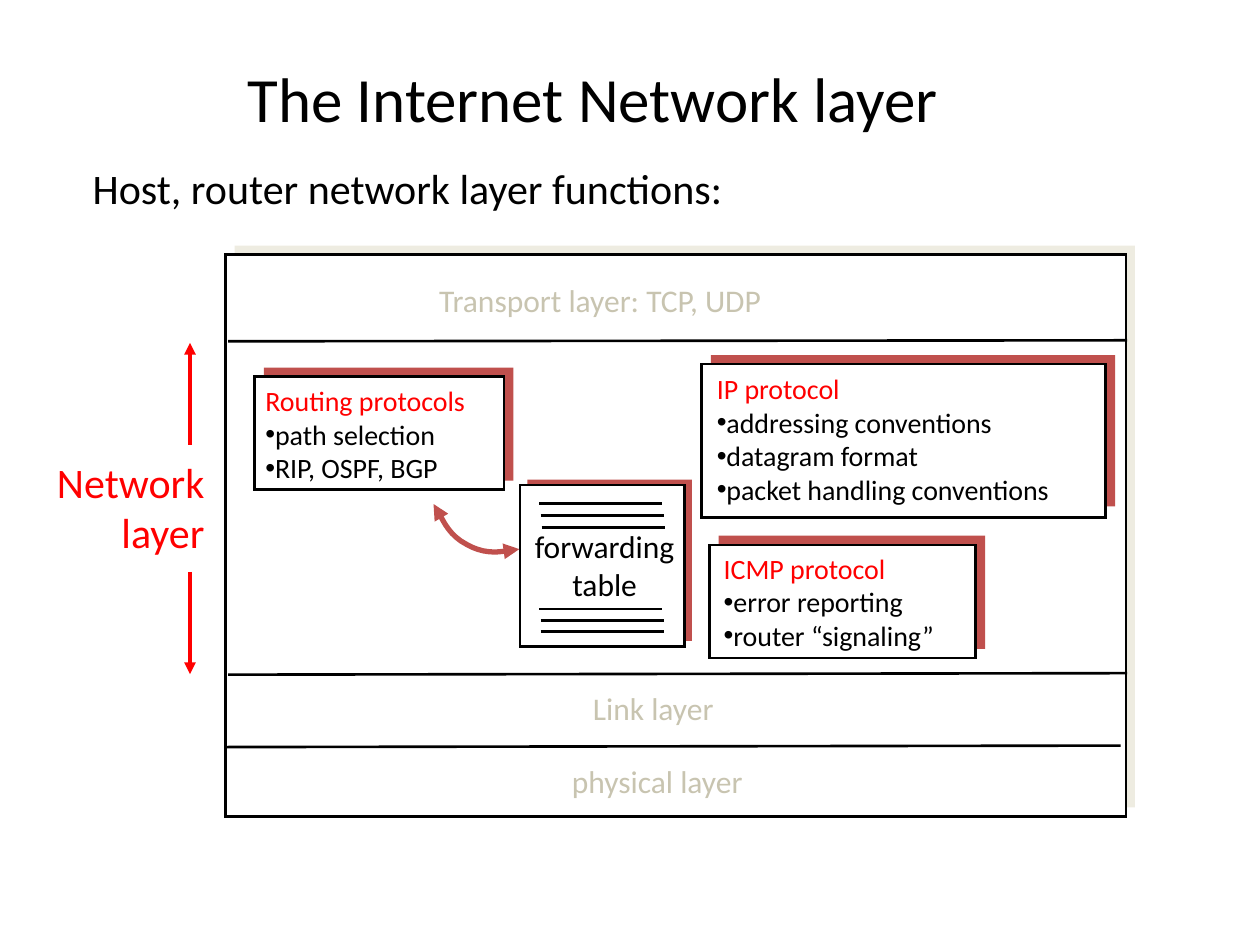
from lxml.etree import SubElement
from pptx import Presentation
from pptx.dml.color import RGBColor
from pptx.enum.shapes import MSO_CONNECTOR, MSO_SHAPE
from pptx.enum.text import MSO_ANCHOR, PP_ALIGN
from pptx.oxml.ns import qn
from pptx.util import Cm, Pt

BLACK, WHITE, RED, BRICK, CREAM = "000000", "FFFFFF", "FF0000", "C0504D", "EEECE1"
FAINT = "C8C4B0"
LEFT, CENTER, RIGHT = PP_ALIGN.LEFT, PP_ALIGN.CENTER, PP_ALIGN.RIGHT

TITLE = ("The Internet Network layer", (1.16, 0.38, 21.59, 3.18))
SUBTITLE = ("Host, router network layer functions:", (1.62, 3.15, 20.93, 1.22))
STACK = ((4.55, 5.13, 18.15, 11.33), (4.73, 4.95, 18.15, 11.33))
LAYERS = [
    ("Transport layer: TCP, UDP", 12.1, 6.04),
    ("Link layer", 13.17, 14.28),
    ("physical layer", 13.25, 15.75),
]
DIVIDERS = [
    (4.6, 6.88, 22.72, 6.86),
    (4.6, 13.6, 22.72, 13.57),
    (4.52, 15.06, 22.59, 15.03),
]
PROTOCOLS = [
    {
        "heading": "Routing protocols",
        "items": ["path selection", "RIP, OSPF, BGP"],
        "front": (5.13, 7.59, 5.03, 2.28),
        "back": (5.32, 7.41, 5.03, 2.28),
        "text": (5.1, 7.61, 5.08, 2.29),
    },
    {
        "heading": "IP protocol",
        "items": ["addressing conventions", "datagram format", "packet handling conventions"],
        "front": (14.14, 7.34, 8.15, 3.1),
        "back": (14.33, 7.16, 8.15, 3.05),
        "text": (14.2, 7.37, 8.03, 2.97),
    },
    {
        "heading": "ICMP protocol",
        "items": ["error reporting", "router “signaling”"],
        "front": (14.3, 10.99, 5.37, 2.28),
        "back": (14.49, 10.8, 5.37, 2.28),
        "text": (14.34, 10.99, 5.28, 2.29),
    },
]
TABLE = ((10.48, 9.78, 3.32, 3.25), (10.63, 9.67, 3.32, 3.25))
TABLE_LABEL = (["forwarding", "table"], (10.31, 10.5, 3.76, 1.78))
TABLE_ROWS = [
    (10.87, 10.15), (10.9, 10.39), (10.92, 10.63),
    (10.87, 12.28), (10.9, 12.51), (10.9, 12.73),
]
ROW_LENGTH = 2.48
SIDE_LABEL = (["Network", "layer"], (0.43, 9.07, 3.94, 2.29))
SIDE_ARROWS = [(3.83, 8.97, 3.83, 6.91), (3.83, 11.53, 3.83, 13.59)]
CURVE = [
    ((8.74, 10.16), (8.86, 10.24), (8.92, 10.72), (9.4, 10.97)),
    ((9.4, 10.97), (9.88, 11.25), (10.26, 11.07), (10.47, 11.07)),
]
CURVE_STEPS = 12

presentation = Presentation()
presentation.slide_width, presentation.slide_height = Cm(25.4), Cm(19.05)
slide = presentation.slides.add_slide(presentation.slide_layouts[6])
shapes = slide.shapes


def color(value):
    return RGBColor.from_string(value)


def lengths(values):
    return [Cm(value) for value in values]


def add_rectangle(box, fill, outlined=False):
    shape = shapes.add_shape(MSO_SHAPE.RECTANGLE, *lengths(box))
    shape.shadow.inherit = False
    shape.fill.solid()
    shape.fill.fore_color.rgb = color(fill)
    if outlined:
        style_line(shape, BLACK, 1.5)
        SubElement(shape.line._get_or_add_ln(), qn("a:miter"), lim="800000")
    else:
        shape.line.fill.background()


def add_card(front, back, back_color):
    add_rectangle(back, back_color)
    add_rectangle(front, WHITE, outlined=True)


def add_text(lines, box, size, ink=BLACK, alignment=LEFT, anchor=MSO_ANCHOR.TOP, bulleted=()):
    frame = shapes.add_textbox(*lengths(box)).text_frame
    for name, value in {"word_wrap": True, "vertical_anchor": anchor}.items():
        setattr(frame, name, value)
    entries = [(line, ink, False) for line in lines] + [(line, BLACK, True) for line in bulleted]
    for index, (line, line_ink, has_bullet) in enumerate(entries):
        paragraph = frame.add_paragraph() if index else frame.paragraphs[0]
        paragraph.text = line
        paragraph.alignment = alignment
        if has_bullet:
            properties = paragraph._p.get_or_add_pPr()
            SubElement(properties, qn("a:buFont"), typeface="Arial")
            SubElement(properties, qn("a:buChar"), char="•")
        font = paragraph.runs[0].font
        for name, value in {"name": "Calibri", "size": Pt(size)}.items():
            setattr(font, name, value)
        font.color.rgb = color(line_ink)


def style_line(shape, ink, width, arrowheads=()):
    shape.line.color.rgb = color(ink)
    shape.line.width = Pt(width)
    for end in arrowheads:
        SubElement(shape.line._get_or_add_ln(), qn(f"a:{end}"), type="triangle")


def add_line(ends, ink=BLACK, width=1.5, arrowheads=()):
    connector = shapes.add_connector(MSO_CONNECTOR.STRAIGHT, *lengths(ends))
    style_line(connector, ink, width, arrowheads)
    SubElement(connector._element.spPr, qn("a:effectLst"))


def curve_point(controls, t):
    weights = ((1 - t) ** 3, 3 * t * (1 - t) ** 2, 3 * t * t * (1 - t), t ** 3)
    return [Cm(sum(w * point[axis] for w, point in zip(weights, controls))) for axis in (0, 1)]


def add_curve():
    points = [curve_point(controls, step / CURVE_STEPS)
              for controls in CURVE for step in range(1, CURVE_STEPS + 1)]
    builder = shapes.build_freeform(*lengths(CURVE[0][0]))
    builder.add_line_segments(points, close=False)
    shape = builder.convert_to_shape()
    shape.shadow.inherit = False
    shape.fill.background()
    style_line(shape, BRICK, 3, ("headEnd", "tailEnd"))


add_card(*STACK, CREAM)
add_text([TITLE[0]], TITLE[1], 36, alignment=CENTER, anchor=MSO_ANCHOR.MIDDLE)
add_text([SUBTITLE[0]], SUBTITLE[1], 24)
for label, center_x, center_y in LAYERS:
    add_text([label], (center_x - 4, center_y - 0.5, 8, 1), 18, FAINT, CENTER, MSO_ANCHOR.MIDDLE)
for divider in DIVIDERS:
    add_line(divider)

add_card(*TABLE, BRICK)
add_text(*TABLE_LABEL, 18, alignment=CENTER)
for x, y in TABLE_ROWS:
    add_line((x, y, x + ROW_LENGTH, y))

for protocol in PROTOCOLS:
    add_card(protocol["front"], protocol["back"], BRICK)
    add_text([protocol["heading"]], protocol["text"], 16, RED, bulleted=protocol["items"])
add_curve()

add_text(*SIDE_LABEL, 24, RED, RIGHT)
for arrow in SIDE_ARROWS:
    add_line(arrow, RED, 2.25, ("tailEnd",))

presentation.save("out.pptx")
